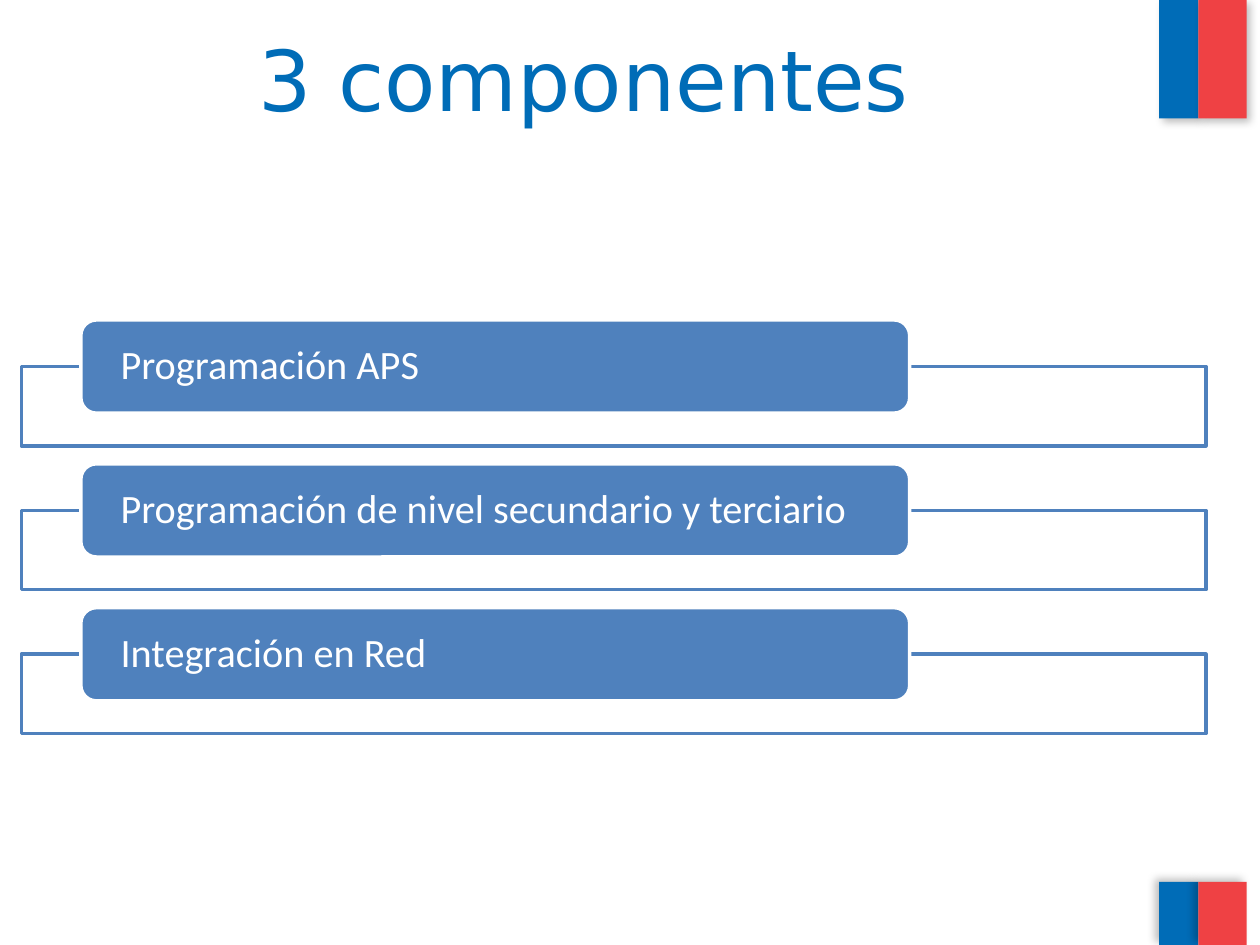
from lxml.etree import SubElement
from pptx import Presentation
from pptx.dml.color import RGBColor
from pptx.enum.shapes import MSO_SHAPE
from pptx.enum.text import MSO_ANCHOR, PP_ALIGN
from pptx.oxml.ns import qn
from pptx.util import Cm, Pt

# Content
TITLE = "3 componentes"
ITEMS = [
    "Programación APS",
    "Programación de nivel secundario y terciario",
    "Integración en Red",
]
HEX = {"blue": "006CB7", "red": "EF4144", "bar": "4F81BD",
       "white": "FFFFFF", "black": "000000"}

# Layout in cm
STRIPES = [("blue", 23.37, 0.79), ("red", 24.16, 0.97)]  # colour, left, width
FLAGS = [(0, 2.39, 45), (17.78, 1.27, 215)]  # top, height, shadow angle
FIRST, STEP, DROP = 6.45, 2.9, 0.94  # first bar, row pitch, frame below bar


def color(name):
    return RGBColor.from_string(HEX[name])


def box(kind, left, top, width, height, fill, line=None):
    shape = slide.shapes.add_shape(
        kind, Cm(left), Cm(top), Cm(width), Cm(height))
    shape.shadow.inherit = False
    shape.fill.solid()
    shape.fill.fore_color.rgb = color(fill)
    if line:
        shape.line.color.rgb = color(line)
        shape.line.width = Pt(2)
    else:
        shape.line.fill.background()
    return shape


def alpha(node, share):
    SubElement(node, qn("a:alpha"), val=str(share * 1000))


def shade(shape, angle):
    effects = shape.element.spPr.find(qn("a:effectLst"))
    outer = SubElement(effects, qn("a:outerShdw"), blurRad=str(Pt(5)),
                       dist=str(Pt(3)), dir=str(angle * 60000),
                       algn="ctr", rotWithShape="0")
    alpha(SubElement(outer, qn("a:srgbClr"), val=HEX["black"]), 25)


def write(frame, text, size, font, ink, align):
    frame.word_wrap = True
    par = frame.paragraphs[0]
    par.alignment = align
    run = par.add_run()
    run.text = text
    run.font.size = Pt(size)
    run.font.name = font
    run.font.color.rgb = color(ink)
    return par


deck = Presentation()
deck.slide_width, deck.slide_height = Cm(25.4), Cm(19.05)
slide = deck.slides.add_slide(deck.slide_layouts[6])

# Flag stripes at the top and bottom right
for top, height, angle in FLAGS:
    for fill, left, width in STRIPES:
        shade(box(MSO_SHAPE.RECTANGLE, left, top, width, height, fill), angle)

# Title
title = slide.shapes.add_textbox(Cm(0.43), Cm(0.43), Cm(22.68), Cm(3.18))
write(title.text_frame, TITLE, 48, "DejaVu Sans", "blue", PP_ALIGN.CENTER)

# Rows: an open frame with a labelled bar over its top edge
for row, item in enumerate(ITEMS):
    top = FIRST + row * STEP
    frame = box(MSO_SHAPE.RECTANGLE, 0.43, top + DROP, 23.88, 1.6,
                "white", "bar")
    alpha(frame.element.spPr.find(qn("a:solidFill"))[0], 90)
    bar = box(MSO_SHAPE.ROUNDED_RECTANGLE, 1.63, top, 16.71, 1.88,
              "bar", "white")
    text = bar.text_frame
    text.margin_left = text.margin_right = Cm(0.71)
    text.margin_top = text.margin_bottom = 0
    text.vertical_anchor = MSO_ANCHOR.MIDDLE
    par = write(text, item, 23, "Calibri", "white", PP_ALIGN.LEFT)
    par.line_spacing = 0.9

deck.save("out.pptx")
